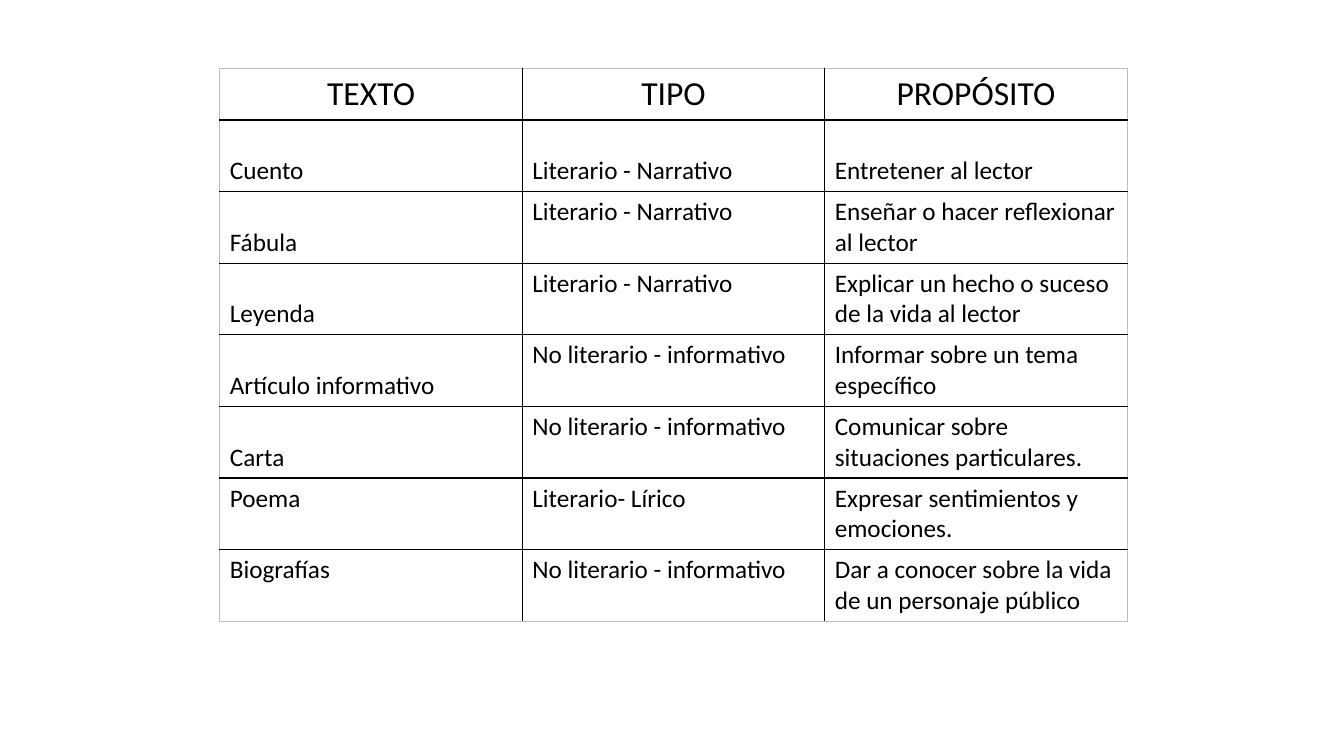
from lxml import etree
from pptx import Presentation
from pptx.dml.color import RGBColor
from pptx.enum.text import MSO_ANCHOR, PP_ALIGN
from pptx.oxml.ns import qn
from pptx.util import Inches, Pt

TOP, BOTTOM = MSO_ANCHOR.TOP, MSO_ANCHOR.BOTTOM
LEFT, CENTER = PP_ALIGN.LEFT, PP_ALIGN.CENTER
INK, EDGE, PAPER = "000000", "BFBFBF", "FFFFFF"
HEAD, BODY = 0.51, 0.71

ROWS = [
    ("TEXTO", "TIPO", "PROPÓSITO"),
    ("Cuento", "Literario - Narrativo", "Entretener al lector"),
    ("Fábula", "Literario - Narrativo", "Enseñar o hacer reflexionar al lector"),
    ("Leyenda", "Literario - Narrativo", "Explicar un hecho o suceso de la vida al lector"),
    ("Artículo informativo", "No literario - informativo", "Informar sobre un tema específico"),
    ("Carta", "No literario - informativo", "Comunicar sobre situaciones particulares."),
    ("Poema", "Literario- Lírico", "Expresar sentimientos y emociones."),
    ("Biografías", "No literario - informativo", "Dar a conocer sobre la vida de un personaje público"),
]
LOW = {(1, 0), (1, 1), (1, 2), (2, 0), (3, 0), (4, 0), (5, 0)}


def color(code):
    return RGBColor.from_string(code)


def add_rules(cell, sides):
    props = cell._tc.get_or_add_tcPr()
    for place, (side, code) in enumerate(sides.items()):
        line = etree.Element(qn(f"a:ln{side}"), w=str(Pt(1)))
        fill = etree.SubElement(line, qn("a:solidFill"))
        etree.SubElement(fill, qn("a:srgbClr"), val=code)
        props.insert(place, line)


def fill_cell(cell, text, size, align, anchor):
    cell.fill.solid()
    cell.fill.fore_color.rgb = color(PAPER)
    cell.vertical_anchor = anchor
    cell.text_frame.text = text
    para = cell.text_frame.paragraphs[0]
    para.alignment = align
    font = para.runs[0].font
    font.name, font.size, font.bold = "Calibri", Pt(size), False
    font.color.rgb = color(INK)


def add_grid(slide, left, top, width):
    count, wide = len(ROWS), len(ROWS[0])
    height = HEAD + BODY * (count - 1)
    frame = slide.shapes.add_table(
        count, wide, Inches(left), Inches(top), Inches(width), Inches(height))
    table = frame.table
    table.first_row = table.horz_banding = False
    for col in table.columns:
        col.width = Inches(width / wide)
    for r, texts in enumerate(ROWS):
        table.rows[r].height = Inches(BODY if r else HEAD)
        for c, text in enumerate(texts):
            cell = table.cell(r, c)
            size, align = (18, LEFT) if r else (24, CENTER)
            fill_cell(cell, text, size, align, BOTTOM if (r, c) in LOW else TOP)
            add_rules(cell, {
                "L": INK if c else EDGE,
                "R": INK if c < wide - 1 else EDGE,
                "T": INK if r else EDGE,
                "B": INK if r < count - 1 else EDGE,
            })


def main():
    deck = Presentation()
    deck.slide_width, deck.slide_height = Inches(13.33), Inches(7.5)
    slide = deck.slides.add_slide(deck.slide_layouts[6])
    add_grid(slide, 2.18, 0.68, 9)
    deck.save("out.pptx")


if __name__ == "__main__":
    main()
